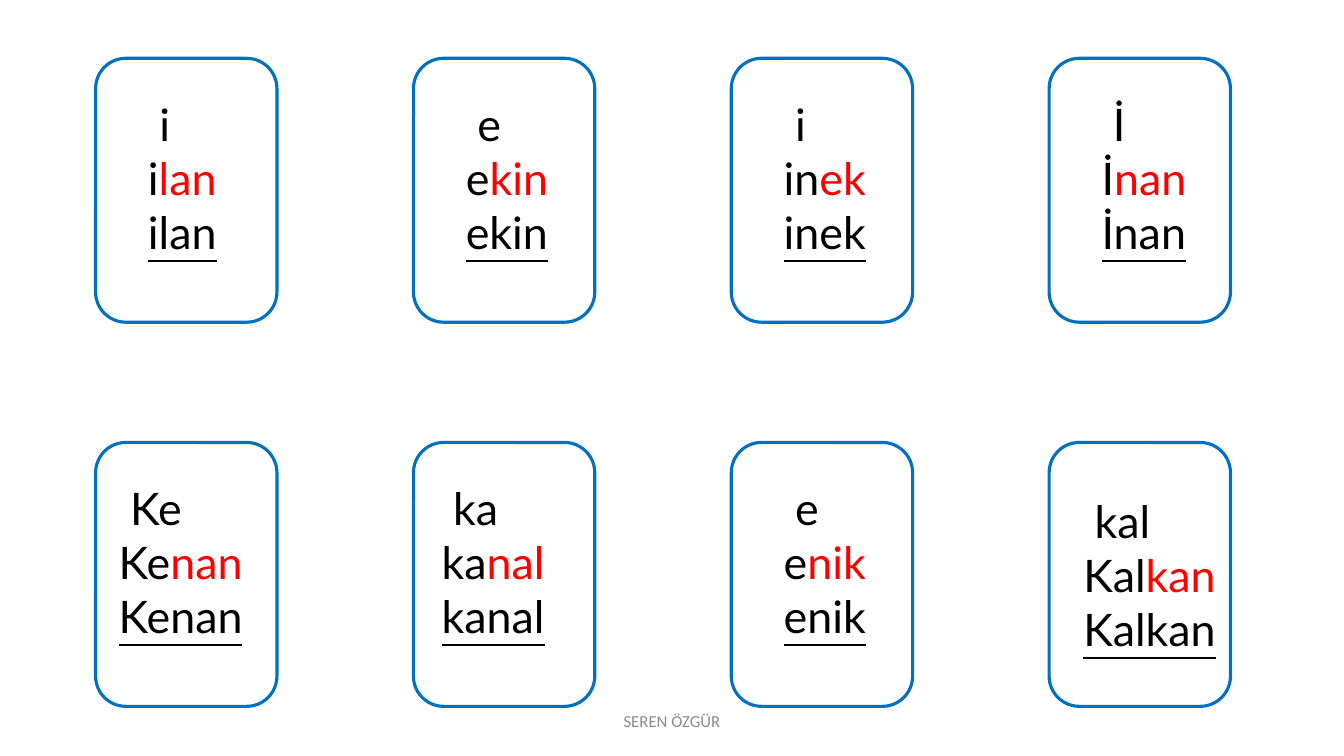
from pptx import Presentation
from pptx import util as u
from pptx.dml.color import RGBColor
from pptx.enum import shapes, text

USUAL = (1.07, 0.85, 2.97)
CARDS = [
    ("i", "i", "lan", USUAL),
    ("e", "e", "kin", USUAL),
    ("i", "in", "ek", USUAL),
    ("İ", "İ", "nan", USUAL),
    ("Ke", "Ke", "nan", (0.33, 0.85, 3.73)),
    ("ka", "ka", "nal", (0.46, 0.85, 3.68)),
    ("e", "e", "nik", USUAL),
    ("kal", "Kal", "kan", (0.61, 1.17, 4.04)),
]
FOOTER = "SEREN ÖZGÜR"

THEME = {
    "outline": RGBColor.from_string("0070C0"),
    "outline_width": u.Pt(2.25),
    "word": {"name": "Lato", "size": u.Pt(32), "color": "000000"},
    "ending": {"name": "Lato", "size": u.Pt(32), "color": "FF0000"},
    "whole": {"name": "Lato", "size": u.Pt(32), "color": "000000", "underline": True},
    "footer": {"name": "Calibri", "size": u.Pt(12), "color": "8C8C8C"},
}

COLUMNS = 4
LEFT, TOP = 2.41, 1.47
COLUMN_STEP, ROW_STEP = 8.01, 9.68
CARD_WIDTH, CARD_HEIGHT = 4.57, 6.65
WORDS_HEIGHT = 4.37


def add_span(para, words, style):
    span = para.add_run()
    span.text = words
    for key, value in THEME[style].items():
        if key == "color":
            span.font.color.rgb = RGBColor.from_string(value)
        else:
            setattr(span.font, key, value)


def add_box(slide, left, top, width, height, **frame_format):
    box = slide.shapes.add_textbox(u.Cm(left), u.Cm(top), u.Cm(width), u.Cm(height))
    frame = box.text_frame
    for key, value in {"word_wrap": True, **frame_format}.items():
        setattr(frame, key, value)
    return frame.paragraphs[0]


def add_card(slide, left, top):
    card = slide.shapes.add_shape(
        shapes.MSO_SHAPE.ROUNDED_RECTANGLE,
        u.Cm(left), u.Cm(top), u.Cm(CARD_WIDTH), u.Cm(CARD_HEIGHT),
    )
    card.shadow.inherit = False
    card.fill.background()
    card.line.color.rgb = THEME["outline"]
    card.line.width = THEME["outline_width"]


def add_words(slide, left, top, width, syllable, start, ending):
    para = add_box(slide, left, top, width, WORDS_HEIGHT,
                   auto_size=text.MSO_AUTO_SIZE.SHAPE_TO_FIT_TEXT)
    add_span(para, " " + syllable, "word")
    para.add_line_break()
    add_span(para, start, "word")
    add_span(para, ending, "ending")
    para.add_line_break()
    add_span(para, start + ending, "whole")


def main():
    deck = Presentation()
    deck.slide_width, deck.slide_height = u.Cm(33.87), u.Cm(19.05)
    slide = deck.slides.add_slide(deck.slide_layouts[6])
    for index, (syllable, start, ending, (inset, drop, width)) in enumerate(CARDS):
        row, column = divmod(index, COLUMNS)
        left = LEFT + column * COLUMN_STEP
        top = TOP + row * ROW_STEP
        add_card(slide, left, top)
        add_words(slide, left + inset, top + drop, width, syllable, start, ending)
    para = add_box(slide, 11.22, 17.66, 11.43, 1.01,
                   vertical_anchor=text.MSO_ANCHOR.MIDDLE)
    para.alignment = text.PP_ALIGN.CENTER
    add_span(para, FOOTER, "footer")
    deck.save("out.pptx")


if __name__ == "__main__":
    main()
